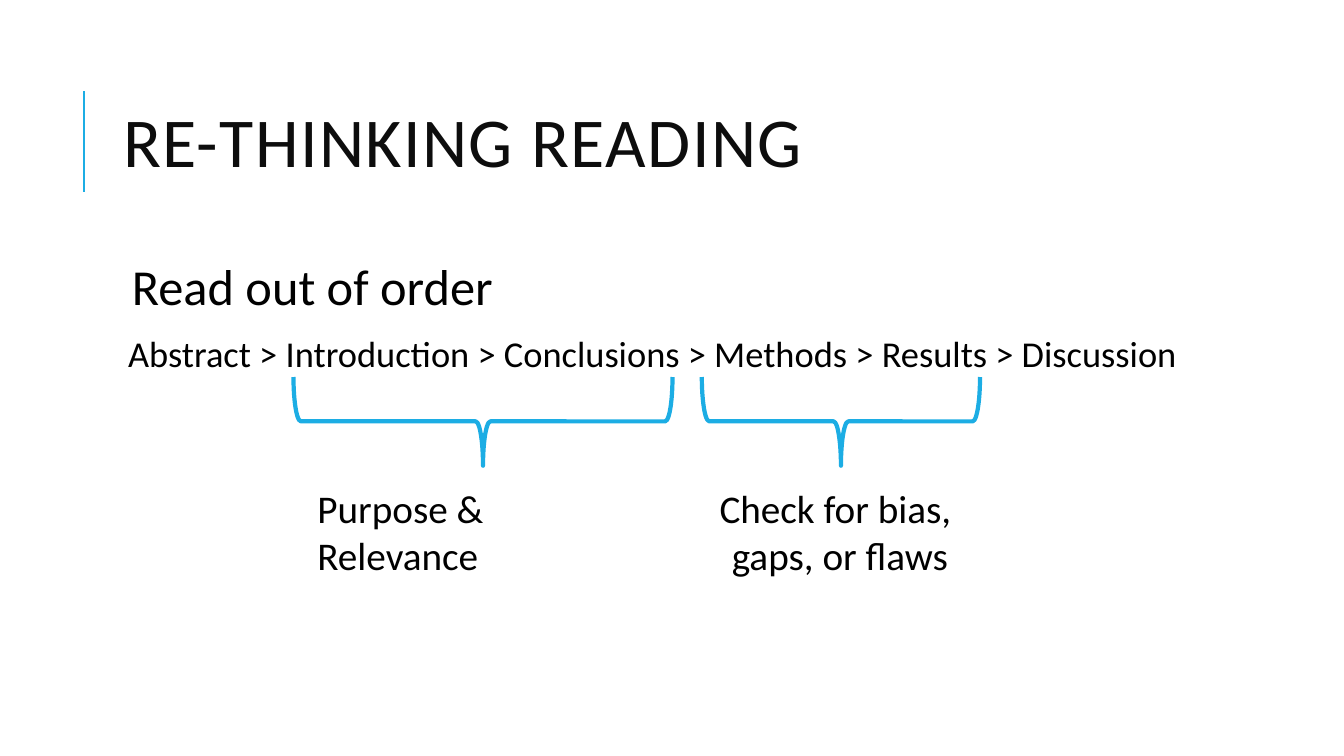
from lxml.etree import SubElement
from pptx import Presentation
from pptx.dml.color import RGBColor
from pptx.enum.shapes import MSO_CONNECTOR, MSO_SHAPE
from pptx.enum.text import MSO_ANCHOR, MSO_AUTO_SIZE, PP_ALIGN
from pptx.oxml.ns import qn
from pptx.util import Inches, Pt

BLUE = RGBColor(0x1C, 0xAD, 0xE4)
BLACK = RGBColor(0, 0, 0)
TITLE_COLOR = RGBColor(0x0D, 0x0D, 0x0D)


def format_text(paragraph, size, color=BLACK):
    for run in paragraph.runs:
        run.font.name = "Calibri"
        run.font.size = Pt(size)
        run.font.color.rgb = color


def place(shape, left, top, width, height):
    shape.left, shape.top = Inches(left), Inches(top)
    shape.width, shape.height = Inches(width), Inches(height)


presentation = Presentation()
presentation.slide_width = Inches(13.33)
presentation.slide_height = Inches(7.5)
slide = presentation.slides.add_slide(presentation.slide_layouts[1])

# Accent line beside the title
accent = slide.shapes.add_connector(
    MSO_CONNECTOR.STRAIGHT, Inches(0.83), Inches(1.9), Inches(0.83), Inches(0.9))
accent.line.color.rgb = BLUE
accent.line.width = Pt(1.5)
SubElement(accent._element.spPr, qn("a:effectLst"))

# Title
title = slide.shapes.title
place(title, 1.12, 0.64, 10.63, 1.64)
title.text_frame.text = "RE-THINKING READING"
title.text_frame.auto_size = MSO_AUTO_SIZE.NONE
title.text_frame.vertical_anchor = MSO_ANCHOR.MIDDLE
heading = title.text_frame.paragraphs[0]
heading.alignment = PP_ALIGN.LEFT
heading.line_spacing = 0.8
format_text(heading, 50, TITLE_COLOR)
heading.runs[0].font._element.set("spc", "100")

# Reading order
body = slide.placeholders[1]
place(body, 1.12, 2.55, 10.63, 4.4)
frame = body.text_frame
frame.auto_size = MSO_AUTO_SIZE.NONE
frame.margin_left = frame.margin_right = Inches(0.05)
frame.margin_top = frame.margin_bottom = Inches(0.05)
frame.text = ("Read out of order\n"
              "Abstract > Introduction > Conclusions > Methods > Results > Discussion")
for paragraph, size in zip(frame.paragraphs, (36, 26)):
    paragraph.line_spacing = 0.9
    paragraph.space_before = Pt(12)
    paragraph.space_after = Pt(2)
    format_text(paragraph, size)
    properties = paragraph._p.get_or_add_pPr()
    properties.set("marL", str(Inches(0.1)))
    properties.set("indent", str(-Inches(0.1)))
    bullet_color = SubElement(properties, qn("a:buClr"))
    SubElement(bullet_color, qn("a:srgbClr"), val=str(BLUE))
    SubElement(properties, qn("a:buChar"), char=" ")

# Braces under the sections, each with its label:
# brace left, top and length, then label left, width, height, alignment and text
groups = [
    (4.35, 2.3, 3.76, 3.05, 3.49, 0.57, PP_ALIGN.LEFT, "Purpose & Relevance"),
    (7.9, 2.8, 2.76, 7.01, 2.64, 1.04, PP_ALIGN.CENTER,
     "Check for bias, \ngaps, or flaws"),
]
for left, top, length, label_left, width, height, alignment, text in groups:
    brace = slide.shapes.add_shape(
        MSO_SHAPE.RIGHT_BRACE, Inches(left), Inches(top), Inches(0.88), Inches(length))
    brace.rotation = 90
    brace.shadow.inherit = False
    brace.fill.background()
    brace.line.color.rgb = BLUE
    brace.line.width = Pt(3)

    label = slide.shapes.add_textbox(
        Inches(label_left), Inches(4.76), Inches(width), Inches(height))
    label.text_frame.word_wrap = True
    label.text_frame.text = text
    for paragraph in label.text_frame.paragraphs:
        paragraph.alignment = alignment
        format_text(paragraph, 28)

presentation.save("out.pptx")
